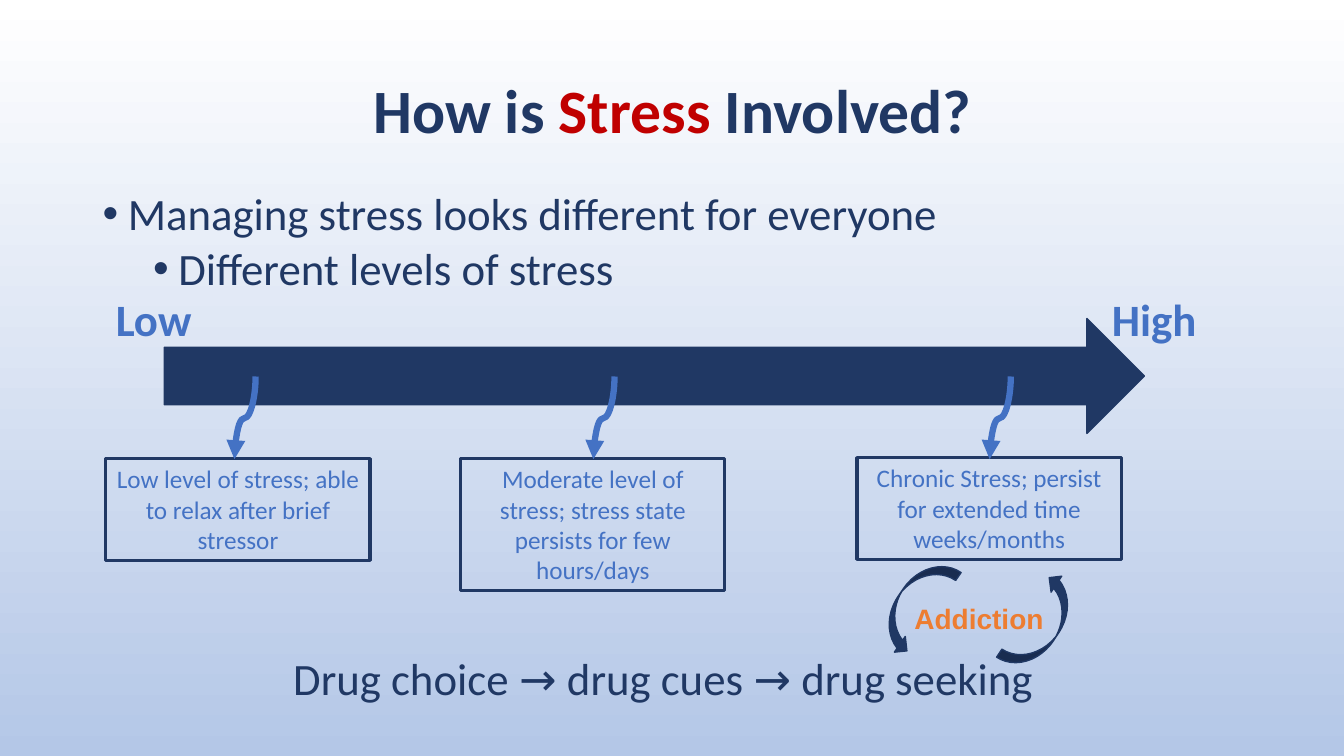
from lxml import etree
from pptx import Presentation
from pptx import util as u
from pptx.dml.color import RGBColor
from pptx.enum import shapes, text
from pptx.oxml.ns import qn

INK = {"navy": "203864", "red": "C00000", "blue": "4472C4",
       "orange": "ED7D31", "white": "FFFFFF", "pale": "B4C7E7"}
KIND = shapes.MSO_SHAPE
MID = text.PP_ALIGN.CENTER


def rgb(name):
    return RGBColor.from_string(INK[name])


def write(para, *parts, size=32, ink="navy", bold=False, font="Calibri", align=None):
    """Add runs to a paragraph; a part is text or (text, font, ink)."""
    para.alignment = align
    for part in parts:
        words, face, tint = (part, font, ink) if isinstance(part, str) else part
        run = para.add_run()
        run.text = words
        run.font.name, run.font.size, run.font.bold = face, u.Pt(size), bold
        run.font.color.rgb = rgb(tint)


deck = Presentation()
deck.slide_width, deck.slide_height = u.Inches(13.33), u.Inches(7.5)
slide = deck.slides.add_slide(deck.slide_layouts[5])

back = slide.background.fill
back.gradient()
back.gradient_angle = 270
for stop, tint in zip(back.gradient_stops, ("white", "pale")):
    stop.color.rgb = rgb(tint)

# Title
title = slide.shapes.title
title.left, title.top = u.Inches(0.92), u.Inches(0.4)
title.width, title.height = u.Inches(11.5), u.Inches(1.45)
title.text_frame.vertical_anchor = text.MSO_ANCHOR.MIDDLE
head = title.text_frame.paragraphs[0]
head.line_spacing = 0.9
write(head, "How is ", ("Stress", "Calibri", "red"), " Involved?",
      size=44, bold=True, align=MID)

# Bullets
body = slide.shapes.add_textbox(*map(u.Inches, (0.92, 1.85, 11.5, 4.91))).text_frame
body.word_wrap = True
points = ["Managing stress looks different for everyone", "Different levels of stress"]
for level, point in enumerate(points):
    para = body.add_paragraph() if level else body.paragraphs[0]
    props = para._p.get_or_add_pPr()
    props.set("marL", str(u.Inches(0.25 + 0.5 * level)))
    props.set("indent", str(u.Inches(-0.25)))
    etree.SubElement(props, qn("a:buFont")).set("typeface", "Arial")
    etree.SubElement(props, qn("a:buChar")).set("char", "•")
    para.level = level
    para.line_spacing = 0.9
    if level:
        para.space_before = u.Pt(5)
    write(para, point)

# Stress scale and the addiction loop
arrows = [(KIND.RIGHT_ARROW, (1.63, 3.16, 9.72, 1.14), 0),
          (KIND.CURVED_UP_ARROW, (9.81, 6, 1.04, 0.38), 303.5),
          (KIND.CURVED_UP_ARROW, (8.56, 5.81, 1.04, 0.38), 124.7)]
for kind, place, turn in arrows:
    arrow = slide.shapes.add_shape(kind, *map(u.Inches, place))
    arrow.shadow.inherit = False
    arrow.rotation = turn
    arrow.fill.solid()
    arrow.fill.fore_color.rgb = rgb("navy")
    arrow.line.color.rgb = rgb("navy")
    arrow.line.width = u.Pt(1)

# Levels: box left, top, height, wording
levels = [(1.05, 4.55, 1.01, "Low level of stress; able to relax after brief stressor"),
          (4.57, 4.55, 1.31, "Moderate level of stress; stress state persists for few hours/days"),
          (8.5, 4.54, 1.01, "Chronic Stress; persist for extended time weeks/months")]
for left, top, high, words in levels:
    box = slide.shapes.add_shape(KIND.RECTANGLE, *map(u.Inches, (left, top, 2.62, high)))
    box.shadow.inherit = False
    box.fill.background()
    box.line.color.rgb = rgb("navy")
    box.line.width = u.Pt(2.25)
    box.text_frame.word_wrap = True
    box.text_frame.vertical_anchor = text.MSO_ANCHOR.TOP
    write(box.text_frame.paragraphs[0], words, size=18, ink="blue", align=MID)

# Curved pointers, laid flat and turned a quarter
for left in (2.02, 5.58, 9.51):
    ends = map(u.Inches, (left, 4.04, left + 0.82, 4.25))
    curve = slide.shapes.add_connector(shapes.MSO_CONNECTOR.CURVE, *ends)
    curve.line.color.rgb = rgb("blue")
    curve.line.width = u.Pt(4.5)
    props = curve._element.spPr
    props.find(qn("a:xfrm")).set("rot", str(90 * 60000))
    etree.SubElement(props.find(qn("a:ln")), qn("a:tailEnd")).set("type", "triangle")
    etree.SubElement(props, qn("a:effectLst"))

# Free labels
chain = ["Drug choice ", ("→", "Roboto", "navy"), " drug cues ",
         ("→", "Roboto", "navy"), " drug seeking"]
labels = [((1.05, 2.84, 1.17, 0.64), ["Low"], dict(ink="blue", bold=True)),
          ((10.93, 2.84, 1.17, 0.64), ["High"], dict(ink="blue", bold=True)),
          ((2.81, 6.41, 9.16, 0.64), chain, {}),
          ((8.79, 5.92, 1.84, 0.44), ["Addiction"],
           dict(size=20, ink="orange", bold=True, font="Arial", align=MID))]
for place, parts, form in labels:
    label = slide.shapes.add_textbox(*map(u.Inches, place)).text_frame
    label.word_wrap = True
    write(label.paragraphs[0], *parts, **form)

deck.save("out.pptx")
